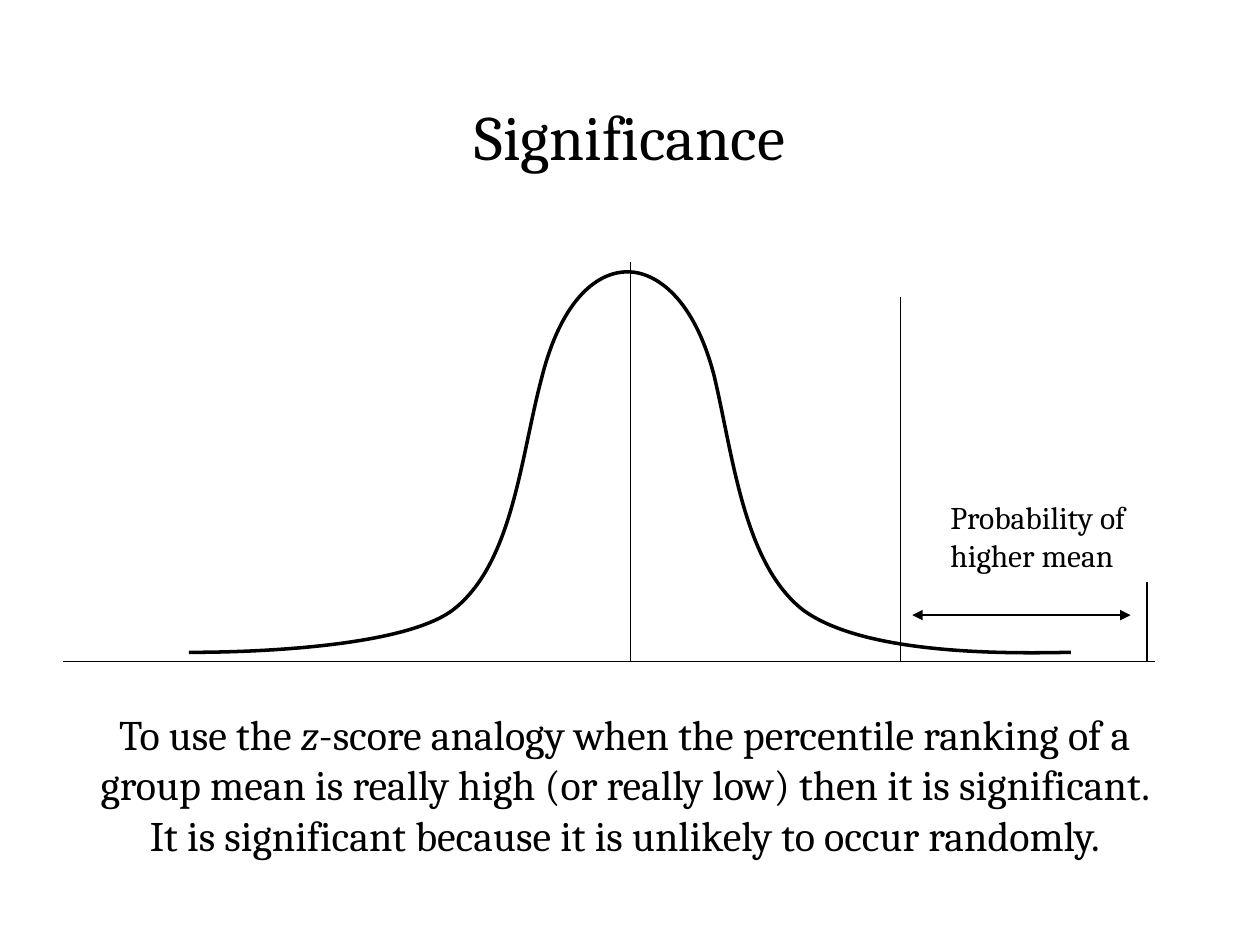
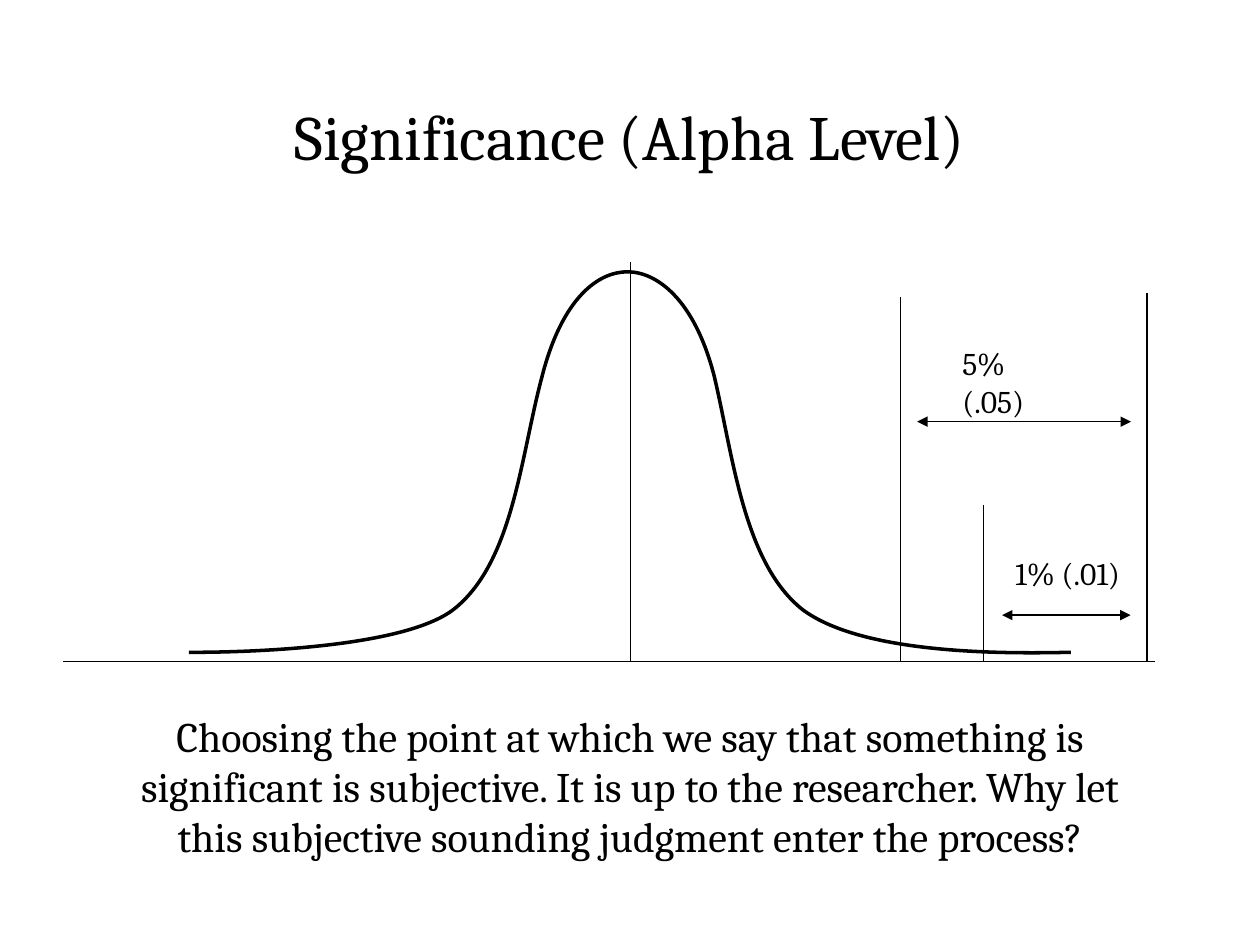
from pptx import Presentation
from pptx.dml.color import RGBColor
from pptx.enum.shapes import MSO_CONNECTOR, MSO_SHAPE
from pptx.enum.text import MSO_ANCHOR, PP_ALIGN
from pptx.oxml.ns import qn
from pptx.util import Cm, Pt
from lxml import etree

STRAIGHT = MSO_CONNECTOR.STRAIGHT
RECT = MSO_SHAPE.RECTANGLE
TOP, MIDDLE = MSO_ANCHOR.TOP, MSO_ANCHOR.MIDDLE
LEFT, CENTER = PP_ALIGN.LEFT, PP_ALIGN.CENTER

COLORS = {"ink": "000000", "paper": "FFFFFF"}
FONT = "Cambria"

# Boxes in cm: left, top, width, height
TITLE = (1.9, 1.14, 21.6, 3.18)
PLOT = (1.27, 5.28, 22.02, 8.05)

# Positions inside the plot, in cm
MEAN, CUT, STRICT, END = 11.44, 16.88, 18.55, 21.85
START = (20.32, 7.87)
BELL = [
    ((19, 7.9), (16.13, 7.92), (14.91, 7.01)),
    ((13.72, 6.07), (13.51, 3.91), (13.13, 2.31)),
    ((12.73, 0.74), (11.96, 0.2), (11.38, 0.2)),
    ((10.8, 0.2), (10.06, 0.71), (9.65, 2.34)),
    ((9.22, 3.96), (9.07, 6.07), (7.87, 7.01)),
    ((6.68, 7.92), (2.54, 7.87), (2.54, 7.87)),
]


def color(name):
    return RGBColor.from_string(COLORS[name])


def fill_text(shape, runs, size, align=LEFT, anchor=TOP, wrap=True):
    """Runs are pairs of text and italic flag."""
    frame = shape.text_frame
    frame.word_wrap = wrap
    frame.vertical_anchor = anchor
    para = frame.paragraphs[0]
    para.alignment = align
    for text, slant in runs:
        run = para.add_run()
        run.text = text
        run.font.name = FONT
        run.font.size = Pt(size)
        run.font.italic = slant
        run.font.color.rgb = color("ink")


def add_text(slide, box, *args, **style):
    fill_text(slide.shapes.add_textbox(*map(Cm, box)), *args, **style)


def add_panel(slide, box, *args, **style):
    panel = slide.shapes.add_shape(RECT, *map(Cm, box))
    panel.shadow.inherit = False
    panel.fill.solid()
    panel.fill.fore_color.rgb = color("paper")
    panel.line.fill.background()
    fill_text(panel, *args, **style)


def add_line(slide, box, x1, y1, x2, y2, arrows=False):
    left, top = box[:2]
    line = slide.shapes.add_connector(
        STRAIGHT, Cm(left + x1), Cm(top + y1), Cm(left + x2), Cm(top + y2))
    line.line.color.rgb = color("ink")
    line.line.width = Pt(0.75)
    props = line.line._get_or_add_ln()
    if arrows:
        for end in ("a:headEnd", "a:tailEnd"):
            etree.SubElement(props, qn(end), type="triangle")
    etree.SubElement(props.getparent(), qn("a:effectLst"))


def add_bell(slide, box):
    left, top = box[:2]

    def place(point):
        return Cm(left + point[0]), Cm(top + point[1])

    pen = slide.shapes.build_freeform(*place(START))
    pen.add_line_segments([place(curve[-1]) for curve in BELL], close=False)
    bell = pen.convert_to_shape()
    # Turn each straight segment into a Bézier curve
    for segment, curve in zip(list(bell._element.iter(qn("a:lnTo"))), BELL):
        bend = etree.Element(qn("a:cubicBezTo"))
        for x, y in map(place, curve):
            etree.SubElement(bend, qn("a:pt"),
                             x=str(x - bell.left), y=str(y - bell.top))
        segment.getparent().replace(segment, bend)
    bell.shadow.inherit = False
    bell.fill.background()
    bell.line.color.rgb = color("ink")
    bell.line.width = Pt(2)


def add_plot(slide, box, marks, spans, labels):
    left, top, width, height = box
    # Axis and upright marks
    add_line(slide, box, 0, height, width, height)
    for x, high in [(MEAN, 0), (CUT, 0.71), *marks]:
        add_line(slide, box, x, high, x, height)
    # Spans with arrowheads
    for x1, x2, y in spans:
        add_line(slide, box, x1, y, x2, y, arrows=True)
    # Labels
    for add, text, (x, y, w, h), wrap in labels:
        add(slide, (left + x, top + y, w, h), [(text, False)], 18, wrap=wrap)
    add_bell(slide, box)


def add_page(deck, title, body, area, marks, spans, labels):
    slide = deck.slides.add_slide(deck.slide_layouts[6])
    slide.background.fill.solid()
    slide.background.fill.fore_color.rgb = color("paper")
    add_text(slide, TITLE, [(title, False)], 36, CENTER, MIDDLE)
    add_plot(slide, PLOT, marks, spans, labels)
    add_text(slide, area, body, 24, CENTER)


def main():
    deck = Presentation()
    deck.slide_width, deck.slide_height = Cm(25.4), Cm(19.05)
    add_page(
        deck, "Significance",
        [("To use the ", False), ("z", True),
         ("-score analogy when the percentile ranking of a group mean is "
          "really high (or really low) then it is significant. It is "
          "significant because it is unlikely to occur randomly.", False)],
        (1.42, 14.16, 22.35, 3.33),
        marks=[(END, 6.46)],
        spans=[(17.12, 21.52, 7.12)],
        labels=[(add_panel, "Probability of higher mean",
                 (17.64, 4.64, 4.67, 1.78), True)])
    add_page(
        deck, "Significance (Alpha Level)",
        [("Choosing the point at which we say that something is significant "
          "is subjective. It is up to the researcher. Why let this subjective "
          "sounding judgment enter the process?", False)],
        (2.11, 14.19, 21.18, 3.33),
        marks=[(STRICT, 4.9), (END, 0.62)],
        spans=[(18.93, 21.52, 7.12), (17.22, 21.53, 3.22)],
        labels=[(add_text, "1% (.01)", (18.95, 5.77, 2.74, 1.02), False),
                (add_text, "5% (.05)", (17.88, 1.54, 2.2, 1.78), True)])
    deck.save("out.pptx")


if __name__ == "__main__":
    main()
